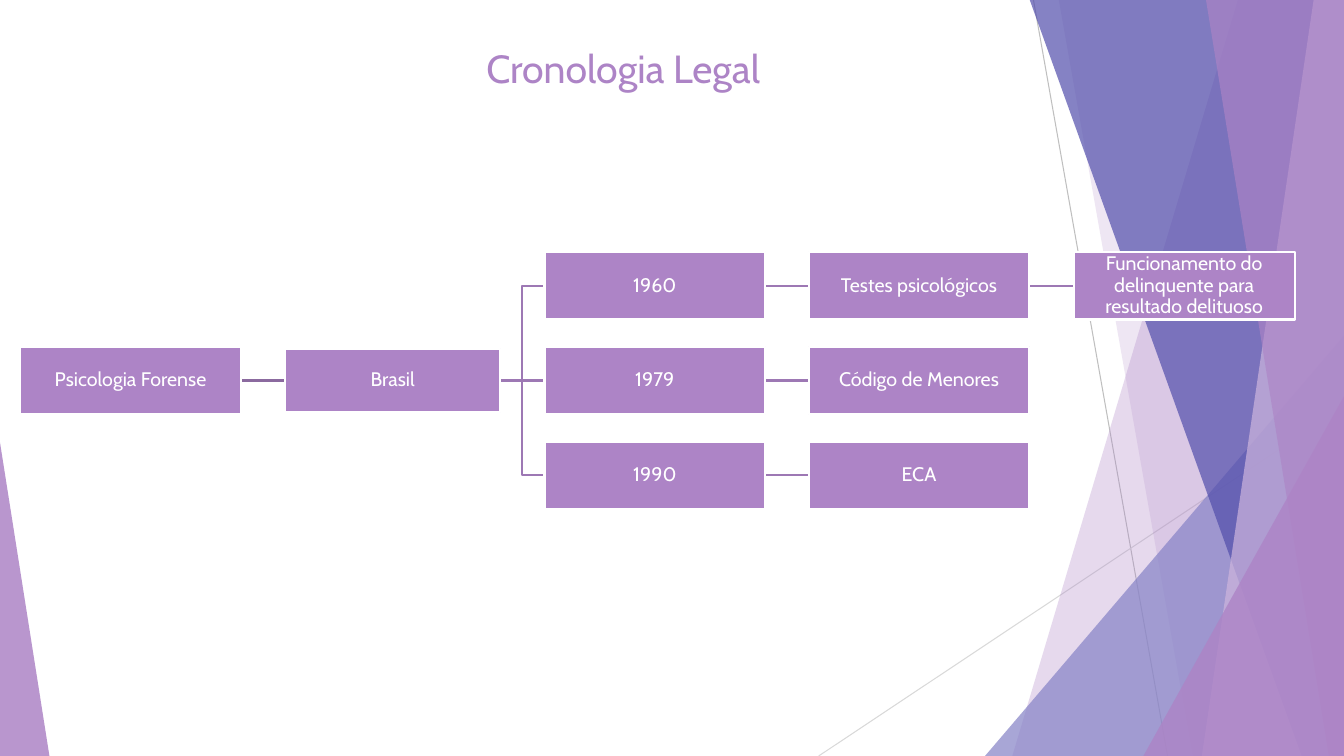
from dataclasses import dataclass

from pptx import Presentation
from pptx import util as u
from pptx.dml.color import RGBColor
from pptx.enum import shapes, text
from pptx.oxml.xmlchemy import OxmlElement

PX = u.Inches(1) // 100
WIDTH, HEIGHT = 1333, 750
FONT = "Cabin"
COLORS = {
    "purple": "AD84C6", "lilac": "CEB5DD", "indigo": "524EAB", "periwinkle": "8784C7",
    "branch": "9D78B4", "trunk": "8B6A9F", "white": "FFFFFF",
    "gray": "BFBFBF", "pale gray": "D9D9D9",
}
COLUMNS = (20, 283, 540, 802, 1065)
ROWS = (250, 344, 438)


@dataclass
class Box:
    label: str
    column: int
    row: int
    parent: int | None
    width: int = 219
    height: int = 67
    drop: int = 0


@dataclass
class Band:
    """A strip running down to the right edge of the slide."""
    top_left: int
    bottom_left: int
    color: str
    opacity: int


@dataclass
class Wedge:
    left: int
    top: int
    width: int
    apex: int
    color: str
    opacity: int


@dataclass
class Ray:
    start: tuple[int, int]
    end: tuple[int, int]
    color: str


RAYS = (
    Ray((1025, 0), (1158, HEIGHT), "gray"),
    Ray((WIDTH, 403), (812, HEIGHT), "pale gray"),
)
FACETS = (
    Band(1228, 1004, "purple", 30),
    Band(1050, 1183, "purple", 20),
    Wedge(977, 333, 356, 1, "periwinkle", 72),
    Band(1021, 1291, "indigo", 70),
    Band(1303, 1192, "lilac", 70),
    Band(1196, 1318, "purple", 65),
    Wedge(1134, 393, 199, 1, "purple", 80),
    Wedge(0, 439, 49, 0, "purple", 85),
)
BOXES = (
    Box("Psicologia Forense", 0, 1, None),
    Box("Brasil", 1, 1, 0, width=213, height=63, drop=2),
    Box("1960", 2, 0, 1),
    Box("Testes psicológicos", 3, 0, 2),
    Box("Funcionamento do delinquente para resultado delituoso", 4, 0, 3),
    Box("1979", 2, 1, 1),
    Box("Código de Menores", 3, 1, 5),
    Box("1990", 2, 2, 1),
    Box("ECA", 3, 2, 7),
)


def rgb(name: str) -> RGBColor:
    return RGBColor.from_string(COLORS[name])


def draw_line(page, kind, start: tuple[int, int], end: tuple[int, int],
              color: str, points: float):
    line = page.shapes.add_connector(kind, *(n * PX for n in start + end))
    line.line.color.rgb = rgb(color)
    line.line.width = u.Pt(points)
    line._element.spPr.append(OxmlElement("a:effectLst"))
    return line


def draw_facet(page, facet: Band | Wedge) -> None:
    if isinstance(facet, Band):
        builder = page.shapes.build_freeform(facet.top_left, -1, scale=PX)
        builder.add_line_segments(
            [(WIDTH, -1), (WIDTH, HEIGHT), (facet.bottom_left, HEIGHT)], close=True)
        shape = builder.convert_to_shape()
    else:
        shape = page.shapes.add_shape(
            shapes.MSO_SHAPE.ISOSCELES_TRIANGLE, facet.left * PX, facet.top * PX,
            facet.width * PX, (HEIGHT - facet.top) * PX)
        shape.adjustments[0] = facet.apex
    shape.shadow.inherit = False
    shape.line.fill.background()
    shape.fill.solid()
    shape.fill.fore_color.rgb = rgb(facet.color)
    alpha = OxmlElement("a:alpha")
    alpha.set("val", str(facet.opacity * 1000))
    shape.fill._xPr.solidFill[0].append(alpha)


def format_text(frame, size: int, color: str) -> None:
    """Centre the frame's only paragraph both ways and set its font."""
    frame.word_wrap = True
    frame.auto_size = text.MSO_AUTO_SIZE.NONE
    frame.vertical_anchor = text.MSO_ANCHOR.MIDDLE
    para = frame.paragraphs[0]
    para.alignment = text.PP_ALIGN.CENTER
    para.font.name = FONT
    para.font.size = u.Pt(size)
    para.font.color.rgb = rgb(color)


def draw_box(page, box: Box):
    shape = page.shapes.add_shape(
        shapes.MSO_SHAPE.RECTANGLE, COLUMNS[box.column] * PX,
        (ROWS[box.row] + box.drop) * PX, box.width * PX, box.height * PX)
    shape.shadow.inherit = False
    shape.fill.solid()
    shape.fill.fore_color.rgb = rgb("purple")
    shape.line.color.rgb = rgb("white")
    shape.line.width = u.Pt(1.5)
    frame = shape.text_frame
    frame.margin_left = frame.margin_right = PX
    frame.margin_top = frame.margin_bottom = PX
    frame.text = box.label
    format_text(frame, 14, "white")
    frame.paragraphs[0].line_spacing = 0.9
    return shape


def draw_tree(page) -> None:
    """Draw the links first, so that the white box edges cover their ends."""
    links = []
    for box in BOXES:
        if box.parent is None:
            continue
        level = box.row == BOXES[box.parent].row
        kind = shapes.MSO_CONNECTOR.STRAIGHT if level else shapes.MSO_CONNECTOR.ELBOW
        color = "trunk" if box.parent == 0 else "branch"
        links.append((box, draw_line(page, kind, (0, 0), (0, 0), color, 1.5)))
    drawn = [draw_box(page, box) for box in BOXES]
    for box, link in links:
        link.begin_connect(drawn[box.parent], 3)
        link.end_connect(drawn[BOXES.index(box)], 1)


def main() -> None:
    deck = Presentation()
    deck.slide_width, deck.slide_height = WIDTH * PX, HEIGHT * PX
    page = deck.slides.add_slide(deck.slide_layouts.get_by_name("Title Only"))

    for ray in RAYS:
        draw_line(page, shapes.MSO_CONNECTOR.STRAIGHT, ray.start, ray.end, ray.color, 0.75)
    for facet in FACETS:
        draw_facet(page, facet)

    title = page.shapes.title
    title.left, title.top, title.width, title.height = (n * PX for n in (148, 36, 940, 63))
    title.text_frame.text = "Cronologia Legal"
    format_text(title.text_frame, 28, "purple")

    draw_tree(page)
    deck.save("out.pptx")


if __name__ == "__main__":
    main()
